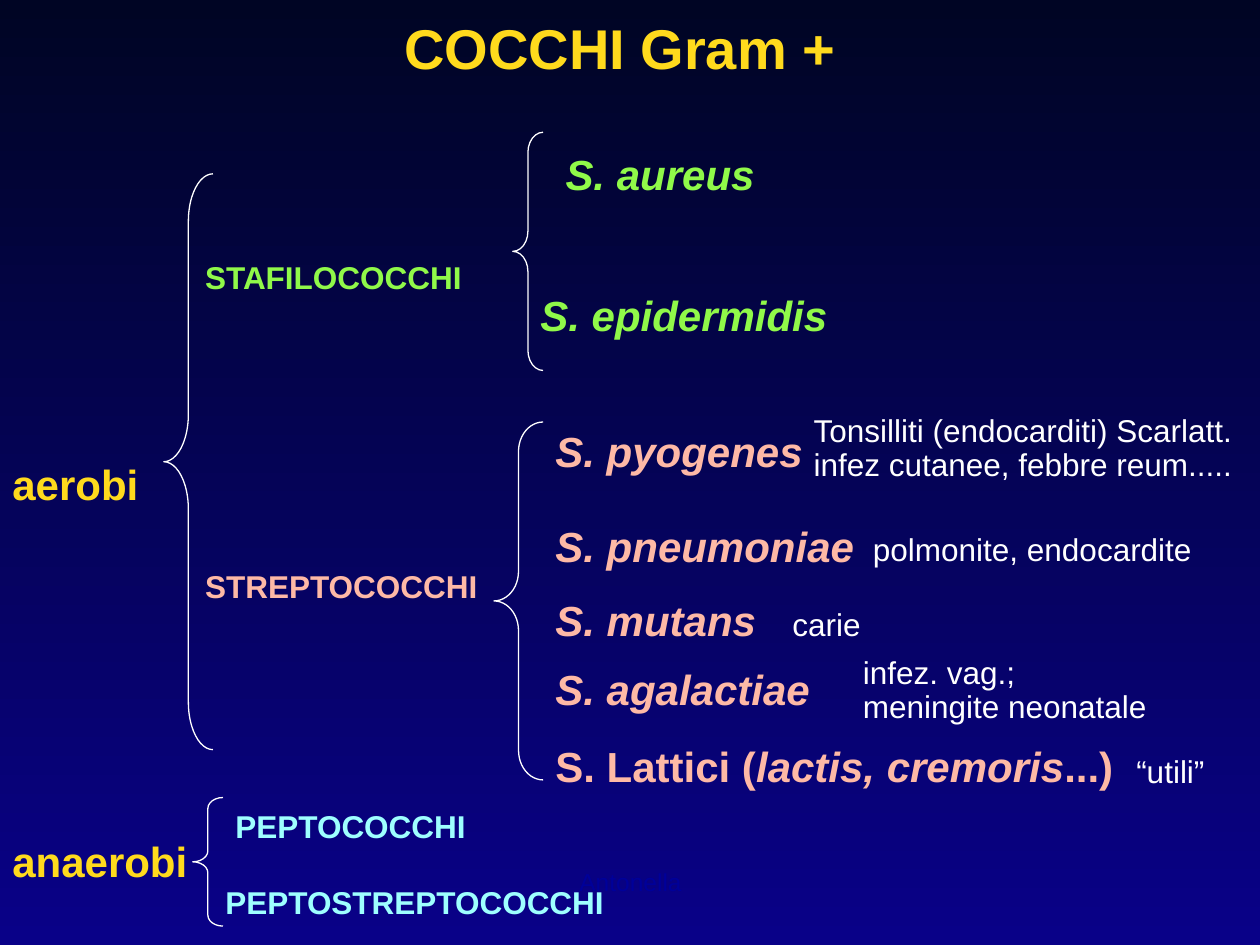
"""Build a slide that classifies the Gram-positive cocci with braces."""
from pptx import Presentation
from pptx.dml.color import RGBColor
from pptx.enum.shapes import MSO_SHAPE
from pptx.enum.text import MSO_ANCHOR, MSO_AUTO_SIZE, PP_ALIGN
from pptx.util import Inches, Pt

BRACE = MSO_SHAPE.LEFT_BRACE
MIDDLE = MSO_ANCHOR.MIDDLE
NO_FIT, GROW = MSO_AUTO_SIZE.NONE, MSO_AUTO_SIZE.SHAPE_TO_FIT_TEXT
CENTER, LEFT = PP_ALIGN.CENTER, PP_ALIGN.LEFT

FONT = "Arial"
NIGHT = RGBColor(0x00, 0x05, 0x24)
INDIGO = RGBColor(0x09, 0x01, 0x88)
NAVY = RGBColor(0x00, 0x00, 0x99)
YELLOW = RGBColor(0xFF, 0xDA, 0x1D)
GREEN = RGBColor(0x90, 0xF9, 0x49)
PINK = RGBColor(0xFE, 0xB9, 0xA6)
CYAN = RGBColor(0x9E, 0xFF, 0xFF)
WHITE = RGBColor(0xFF, 0xFF, 0xFF)

TITLE = "COCCHI Gram +"
AUTHOR = "Antonella"
OXYGEN = [("aerobi", 0, 3.59, 1.2), ("anaerobi", 0, 6.58, 1.6)]
GENERA = [
    ("STAFILOCOCCHI", 1.53, 2, 2.26, GREEN),
    ("STREPTOCOCCHI", 1.53, 4.45, 2.37, PINK),
    ("PEPTOCOCCHI", 1.77, 6.36, 2.03, CYAN),
    ("PEPTOSTREPTOCOCCHI", 1.69, 6.96, 3.22, CYAN),
]
SPECIES = [
    ("S. aureus", 4.39, 1.13, 1.8, GREEN),
    ("S. epidermidis", 4.19, 2.25, 2.59, GREEN),
    ("S. pyogenes", 4.31, 3.33, 2.27, PINK),
    ("S. pneumoniae", 4.31, 4.08, 2.68, PINK),
    ("S. mutans", 4.31, 4.67, 1.89, PINK),
    ("S. agalactiae", 4.31, 5.22, 2.32, PINK),
]
LACTIC = [("S. Lattici (", False), ("lactis, cremoris", True), ("...)", False)]
DISEASES = [
    ("Tonsilliti (endocarditi) Scarlatt.\ninfez cutanee, febbre reum.....", 6.36, 3.25, 3.56),
    ("polmonite, endocardite", 6.83, 4.16, 2.73),
    ("carie", 6.19, 4.75, 0.74),
    ("infez. vag.;\nmeningite neonatale", 6.75, 5.17, 2.48),
    ("“utili”", 8.92, 5.92, 0.83),
]
BRACES = [
    (1.3, 1.38, 0.39, 4.57, 0.966),
    (1.53, 6.33, 0.24, 1.02, 0.362),
    (4.07, 1.05, 0.24, 1.89, 0.667),
    (3.92, 3.35, 0.39, 2.84, 0.602),
]


def style(r, size, color, bold=False, italic=False):
    f = r.font
    f.name, f.size, f.bold, f.italic = FONT, Pt(size), bold, italic
    f.color.rgb = color


def add_label(s, text, x, y, w, size, color, bold=False, italic=False, align=LEFT):
    two_lines = "\n" in text
    h = 0.65 if two_lines else 0.5 if size == 24 else 0.4
    tf = s.shapes.add_textbox(Inches(x), Inches(y), Inches(w), Inches(h)).text_frame
    tf.word_wrap = False
    tf.auto_size = GROW
    tf.text = text
    for p in tf.paragraphs:
        p.alignment = align
        if two_lines:
            p.line_spacing = 0.9
        for r in p.runs:
            style(r, size, color, bold, italic)
    return tf


def add_brace(s, x, y, w, h, curve):
    sp = s.shapes.add_shape(BRACE, Inches(x), Inches(y), Inches(w), Inches(h))
    sp.adjustments[0] = curve
    sp.shadow.inherit = False
    sp.fill.background()
    sp.line.color.rgb = WHITE
    sp.line.width = Pt(0.75)


def add_title(s):
    sp = s.shapes.title
    sp.left, sp.top, sp.width, sp.height = map(Inches, (2.67, 0.08, 4.5, 0.58))
    tf = sp.text_frame
    tf.text = TITLE
    tf.auto_size = NO_FIT
    tf.vertical_anchor = MIDDLE
    p = tf.paragraphs[0]
    p.alignment = CENTER
    style(p.runs[0], 32, YELLOW, bold=True)


def add_lactic(s):
    tf = add_label(s, "", 4.31, 5.83, 4.69, 24, PINK)
    tf.word_wrap = True
    for text, italic in LACTIC:
        r = tf.paragraphs[0].add_run()
        r.text = text
        style(r, 24, PINK, True, italic)


def main():
    prs = Presentation()
    prs.slide_width, prs.slide_height = Inches(10), Inches(7.5)
    s = prs.slides.add_slide(prs.slide_layouts[5])
    fill = s.background.fill
    fill.gradient()
    fill.gradient_angle = 270
    for stop, color in zip(fill.gradient_stops, (NIGHT, INDIGO)):
        stop.color.rgb = color

    add_label(s, AUTHOR, 3.42, 6.83, 3.17, 14, NAVY, align=CENTER)
    add_title(s)
    for brace in BRACES:
        add_brace(s, *brace)
    for text, x, y, w in OXYGEN:
        add_label(s, text, x, y, w, 24, YELLOW, bold=True)
    for text, x, y, w, color in GENERA:
        add_label(s, text, x, y, w, 18, color, bold=True)
    for text, x, y, w, color in SPECIES:
        add_label(s, text, x, y, w, 24, color, bold=True, italic=True)
    add_lactic(s)
    for text, x, y, w in DISEASES:
        add_label(s, text, x, y, w, 18, WHITE)
    prs.save("out.pptx")


if __name__ == "__main__":
    main()
